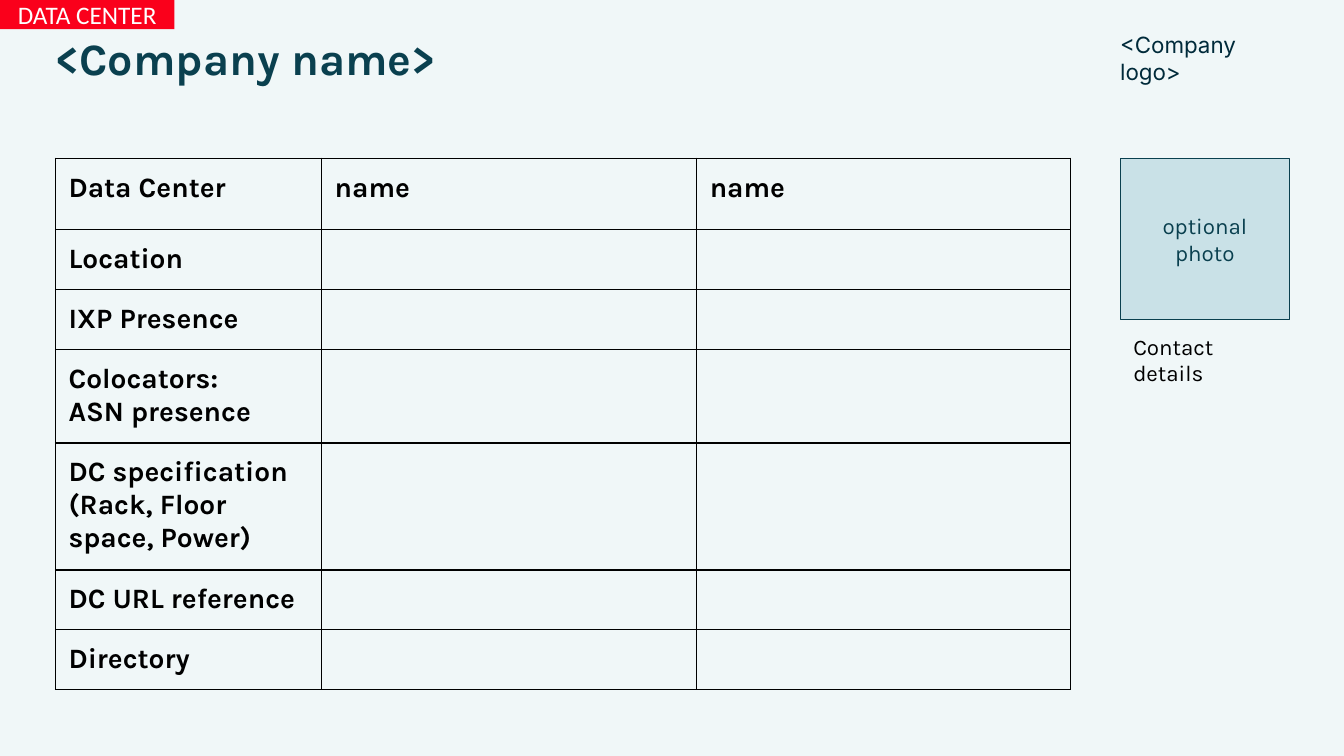
from pptx import Presentation
from pptx.dml.color import RGBColor
from pptx.enum.shapes import MSO_SHAPE as Shape
from pptx.enum.text import MSO_ANCHOR as Anchor, MSO_AUTO_SIZE as Auto, PP_ALIGN as Align
from pptx.oxml import parse_xml
from pptx.oxml.ns import nsdecls
from pptx.util import Inches, Pt

PAD = 0.13
INK, PALE, RED = "0A404F", "C9E1E7", "FA001B"
COLS = [2.64, 3.72, 3.71]
ROWS = [
    (0.71, ["Data Center", "name", "name"]),
    (0.56, ["Location"]),
    (0.56, ["IXP Presence"]),
    (0.71, ["Colocators:\nASN presence"]),
    (0.77, ["DC specification\n(Rack, Floor space, Power)"]),
    (0.53, ["DC URL reference"]),
    (0.53, ["Directory"]),
]


def paint(target, color):
    """Give a fill or font the colour of a hex string."""
    if hasattr(target, "solid"):
        target.solid()
        target.fore_color.rgb = RGBColor.from_string(color)
    else:
        target.color.rgb = RGBColor.from_string(color)


def write(frame, text, size, face, color, bold=False, align=Align.LEFT):
    """Fill a text frame with evenly styled paragraphs."""
    frame.text = text
    for para in frame.paragraphs:
        para.alignment = align
        font = para.font
        font.size, font.name, font.bold = Pt(size), face, bold
        paint(font, color)


def inset(frame, pad=PAD):
    """Set equal margins on a text frame or table cell."""
    frame.margin_left = frame.margin_right = Inches(pad)
    frame.margin_top = frame.margin_bottom = Inches(pad)


def add_panel(slide, box, text, size, face, color, fill, line=None):
    """Add a filled rectangle with centred text."""
    panel = slide.shapes.add_shape(Shape.RECTANGLE, *map(Inches, box))
    panel.shadow.inherit = False
    paint(panel.fill, fill)
    if line:
        paint(panel.line.fill, line)
        panel.line.width = Pt(0.75)
    else:
        panel.line.fill.background()
    frame = panel.text_frame
    frame.word_wrap, frame.vertical_anchor = True, Anchor.MIDDLE
    inset(frame)
    write(frame, text, size, face, color, align=Align.CENTER)


def add_label(slide, box, text, face, color):
    """Add a wrapped text box."""
    frame = slide.shapes.add_textbox(*map(Inches, box)).text_frame
    frame.word_wrap = True
    inset(frame)
    write(frame, text, 16, face, color)


def add_title(slide, box, text):
    """Place and style the slide title."""
    title = slide.shapes.title
    title.left, title.top, title.width, title.height = map(Inches, box)
    frame = title.text_frame
    frame.word_wrap, frame.auto_size = True, Auto.NONE
    frame.vertical_anchor = Anchor.TOP
    inset(frame, 0)
    write(frame, text, 32, "Karla", INK, True)
    frame.paragraphs[0].line_spacing = 0.85


def add_border(cell):
    """Draw a thin black line on each side of a cell."""
    props = cell._tc.get_or_add_tcPr()
    for spot, side in enumerate("LRTB"):
        props.insert(spot, parse_xml(
            f'<a:ln{side} {nsdecls("a")} w="12700"><a:solidFill>'
            f'<a:srgbClr val="000000"/></a:solidFill></a:ln{side}>'))


def add_grid(slide, box):
    """Add the data center table."""
    table = slide.shapes.add_table(len(ROWS), len(COLS), *map(Inches, box)).table
    table.first_row = table.horz_banding = False
    for col, width in zip(table.columns, COLS):
        col.width = Inches(width)
    for row, (height, texts) in zip(table.rows, ROWS):
        row.height = Inches(height)
        for spot, cell in enumerate(row.cells):
            inset(cell)
            cell.fill.background()
            add_border(cell)
            if spot < len(texts):
                write(cell.text_frame, texts[spot], 20, "Karla", "000000", True)


def add_side(slide, left, top, width):
    """Add the photo panel with contact details below it."""
    tall = 1.6
    add_panel(slide, (left, top, width, tall), "optional\nphoto", 16, "Karla", INK, PALE, INK)
    add_label(slide, (left, top + tall, width, 0.81), "Contact details", "Karla", "000000")


def main():
    """Build and save the slide."""
    deck = Presentation()
    deck.slide_width, deck.slide_height = Inches(13.33), Inches(7.5)
    slide = deck.slides.add_slide(deck.slide_layouts[5])
    paint(slide.background.fill, "F0F7F8")
    left, top = 0.55, 1.57
    add_side(slide, 11.11, top, 1.68)
    add_label(slide, (10.98, 0.18, 2.07, 0.54), "<Company logo>", "Inter", "002A3A")
    add_title(slide, (left, 0.39, 12.23, 0.47), "<Company name>")
    add_panel(slide, (0, -0.01, 1.73, 0.3), "DATA CENTER", 18, "Calibri", "FFFFFF", RED)
    add_grid(slide, (left, top, sum(COLS), 5.31))
    deck.save("out.pptx")


if __name__ == "__main__":
    main()
